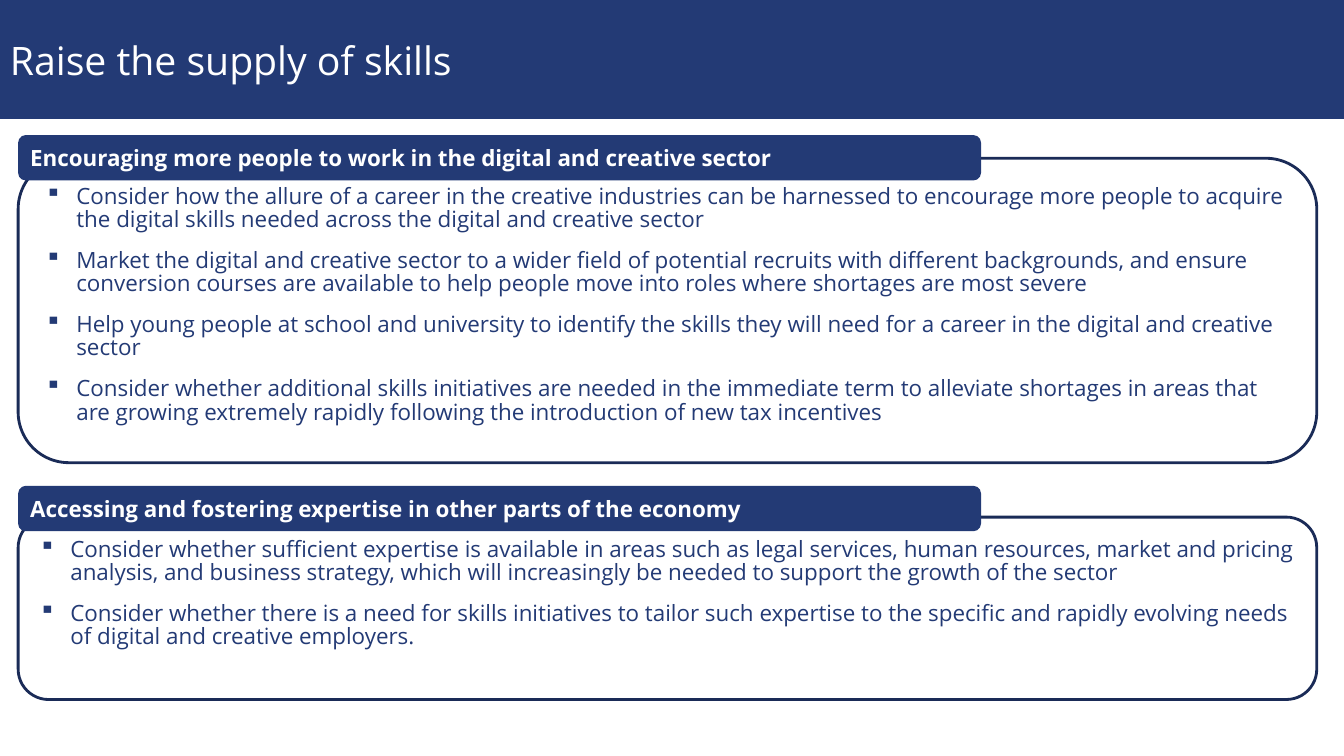
from lxml import etree
from pptx import Presentation, util as u
from pptx.dml.color import RGBColor
from pptx.enum import shapes, text
from pptx.oxml.ns import qn

WIDTH, HEIGHT = 13.33, 7.5
MARGIN = 0.18
PANEL_WIDTH, HEADING_WIDTH, HEADING_HEIGHT = 12.88, 9.55, 0.45
NAVY, DARK_NAVY, WHITE = "233A75", "1A2B57", "FFFFFF"

# heading, heading top, panel top, panel height, bullets
SECTIONS = [
    ("Encouraging more people to work in the digital and creative sector", 1.34, 1.57, 3.02, [
        "Consider how the allure of a career in the creative industries can be harnessed to "
        "encourage more people to acquire the digital skills needed across the digital and "
        "creative sector",
        "Market the digital and creative sector to a wider field of potential recruits with "
        "different backgrounds, and ensure conversion courses are available to help people "
        "move into roles where shortages are most severe",
        "Help young people at school and university to identify the skills they will need for "
        "a career in the digital and creative sector",
        "Consider whether additional skills initiatives are needed in the immediate term to "
        "alleviate shortages in areas that are growing extremely rapidly following the "
        "introduction of new tax incentives",
    ]),
    ("Accessing and fostering expertise in other parts of the economy", 4.82, 5.13, 1.81, [
        "Consider whether sufficient expertise is available in areas such as legal services, "
        "human resources, market and pricing analysis, and business strategy, which will "
        "increasingly be needed to support the growth of the sector",
        "Consider whether there is a need for skills initiatives to tailor such expertise to "
        "the specific and rapidly evolving needs of digital and creative employers.",
    ]),
]


def color(value):
    return RGBColor.from_string(value)


def add_box(slide, kind, left, top, width, height, fill=None, line=None):
    shape = slide.shapes.add_shape(kind, *map(u.Inches, (left, top, width, height)))
    shape.shadow.inherit = False
    if fill:
        shape.fill.solid()
        shape.fill.fore_color.rgb = color(fill)
    else:
        shape.fill.background()
    if line:
        shape.line.color.rgb = color(line)
        shape.line.width = u.Pt(2)
    else:
        shape.line.fill.background()
    return shape


def write(paragraph, wording, size, ink, bold=False):
    paragraph.text = wording
    paragraph.alignment = text.PP_ALIGN.LEFT
    font = paragraph.runs[0].font
    font.name, font.size, font.bold = "Open Sans", u.Pt(size), bold
    font.color.rgb = color(ink)


def add_bar(slide, kind, box, wording, size, bold=False, wrap=True):
    """Add a filled bar with one line of white text."""
    frame = add_box(slide, kind, *box, fill=NAVY).text_frame
    frame.word_wrap = wrap
    frame.vertical_anchor = text.MSO_ANCHOR.MIDDLE
    write(frame.paragraphs[0], wording, size, WHITE, bold)


def set_bullet(paragraph, indent=0.31):
    properties = paragraph._p.get_or_add_pPr()
    properties.set("marL", str(u.Inches(indent)))
    properties.set("indent", str(-u.Inches(indent)))
    etree.SubElement(properties, qn("a:buChar")).set("char", "▪")


def add_panel(slide, top, height, bullets):
    frame = add_box(slide, shapes.MSO_SHAPE.ROUNDED_RECTANGLE, MARGIN, top,
                    PANEL_WIDTH, height, line=DARK_NAVY).text_frame
    frame.word_wrap = True
    frame.vertical_anchor = text.MSO_ANCHOR.TOP
    frame.margin_left = frame.margin_right = u.Inches(0.12)
    frame.margin_top = frame.margin_bottom = u.Inches(0.12)
    for index, wording in enumerate(bullets):
        paragraph = frame.add_paragraph() if index else frame.paragraphs[0]
        write(paragraph, wording, 16, NAVY)
        paragraph.line_spacing = 0.88
        paragraph.space_after = u.Pt(12)
        set_bullet(paragraph)


def main():
    presentation = Presentation()
    presentation.slide_width = u.Inches(WIDTH)
    presentation.slide_height = u.Inches(HEIGHT)
    slide = presentation.slides.add_slide(presentation.slide_layouts[6])
    add_bar(slide, shapes.MSO_SHAPE.RECTANGLE, (0, 0, WIDTH, 1.18),
            "Raise the supply of skills", 28)
    for heading, heading_top, panel_top, panel_height, bullets in SECTIONS:
        add_panel(slide, panel_top, panel_height, bullets)
        add_bar(slide, shapes.MSO_SHAPE.ROUNDED_RECTANGLE,
                (MARGIN, heading_top, HEADING_WIDTH, HEADING_HEIGHT),
                heading, 16, bold=True, wrap=False)
    presentation.save("out.pptx")


if __name__ == "__main__":
    main()
